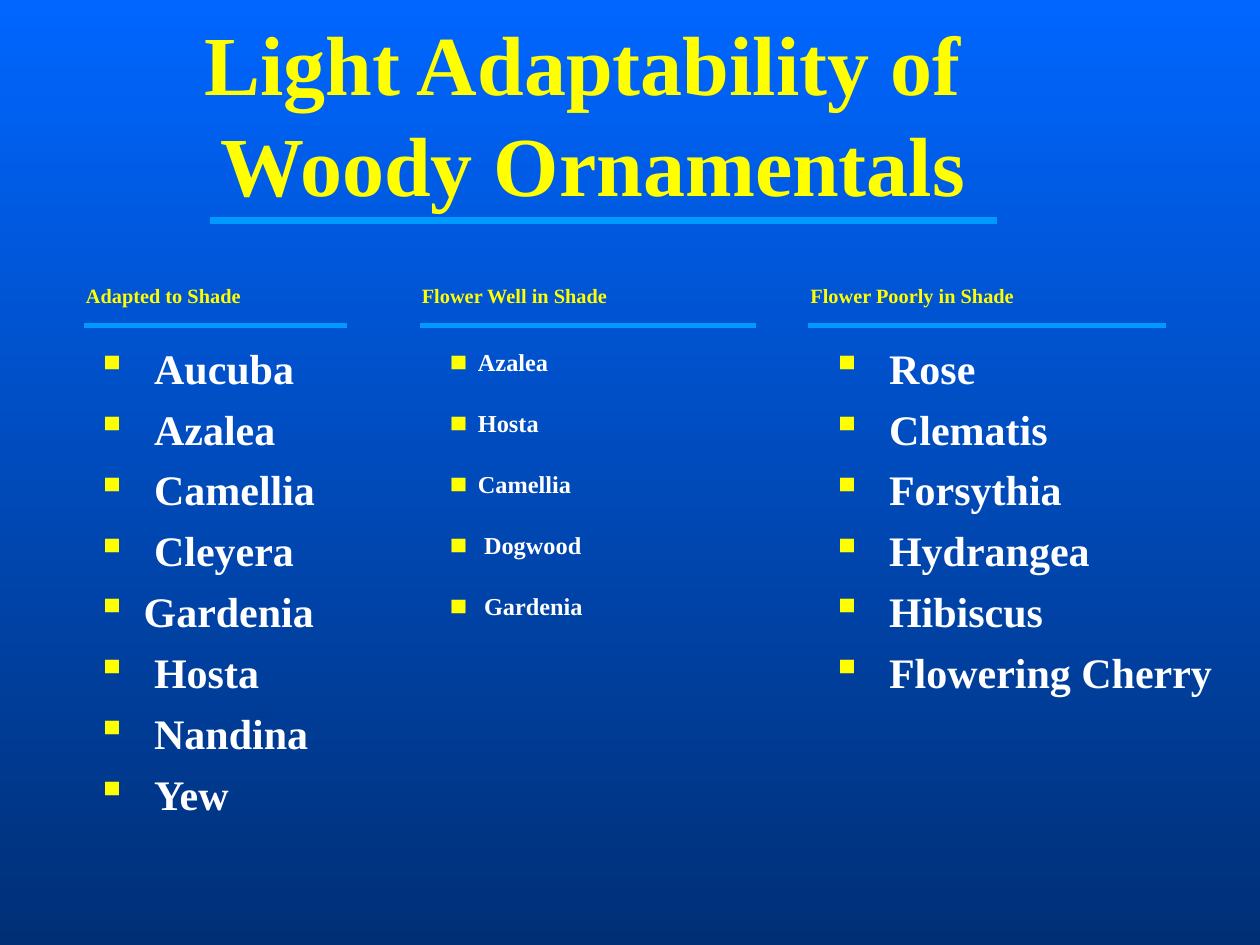
from dataclasses import dataclass

from lxml import etree
from pptx import Presentation
from pptx.dml.color import RGBColor
from pptx.enum import shapes, text
from pptx.oxml import ns
from pptx.util import Pt


@dataclass(frozen=True)
class Theme:
    font: str = "Times New Roman"
    accent: str = "FFFF00"
    body: str = "FFFFFF"
    rule: str = "0099FF"
    sky: tuple = ("0066FF", "002F76")
    title_size: int = 48
    heading_size: int = 20
    item_size: int = 24


class Page:
    """The current slide and the style its elements share."""

    def __init__(self, deck, theme):
        self.theme = theme
        self.slide = deck.slides.add_slide(deck.slide_layouts[6])

    def background(self):
        fill = self.slide.background.fill
        fill.gradient()
        fill.gradient_angle = 270
        for stop, color in zip(fill.gradient_stops, self.theme.sky):
            stop.color.rgb = RGBColor.from_string(color)

    def frame(self, left, top, width, height):
        box = self.slide.shapes.add_textbox(Pt(left), Pt(top), Pt(width), Pt(height))
        box.text_frame.word_wrap = True
        return box.text_frame

    def style(self, para, size, color):
        para.font.name = self.theme.font
        para.font.size = Pt(size)
        para.font.bold = True
        para.font.color.rgb = RGBColor.from_string(color)

    def raise_text(self, para):
        for span in para.runs:
            span.font._element.set("baseline", "30000")

    def title(self, words, left, top, width, height):
        frame = self.frame(left, top, width, height)
        frame.vertical_anchor = text.MSO_ANCHOR.MIDDLE
        para = frame.paragraphs[0]
        para.text = words
        para.alignment = text.PP_ALIGN.CENTER
        para.line_spacing = Pt(57.7)
        self.style(para, self.theme.title_size, self.theme.accent)

    def heading(self, words, left, top, width, height):
        para = self.frame(left, top, width, height).paragraphs[0]
        para.text = words
        self.style(para, self.theme.heading_size, self.theme.accent)
        self.raise_text(para)

    def bullet(self, para, indent):
        props = para._p.get_or_add_pPr()
        props.set("marL", str(Pt(indent)))
        props.set("indent", str(-Pt(indent)))
        color = etree.Element(ns.qn("a:buClr"))
        etree.SubElement(color, ns.qn("a:srgbClr"), val=self.theme.accent)
        mark = etree.Element(ns.qn("a:buChar"), char="▪")
        # Bullet settings stand between the spacing and the default run style
        default = props.find(ns.qn("a:defRPr"))
        default.addprevious(color)
        default.addprevious(mark)

    def items(self, entries, left, top, width, height, raised):
        frame = self.frame(left, top, width, height)
        for number, (words, indent) in enumerate(entries):
            para = frame.add_paragraph() if number else frame.paragraphs[0]
            para.text = words
            para.space_before = Pt(6)
            self.style(para, self.theme.item_size, self.theme.body)
            self.bullet(para, indent)
            if raised:
                self.raise_text(para)

    def rule(self, left, right, y, weight):
        line = self.slide.shapes.add_connector(
            shapes.MSO_CONNECTOR.STRAIGHT, Pt(left), Pt(y), Pt(right), Pt(y))
        line.line.color.rgb = RGBColor.from_string(self.theme.rule)
        line.line.width = Pt(weight)
        etree.SubElement(line._element.spPr, ns.qn("a:effectLst"))


# Each column: heading and its box, rule ends, list box, raised text, (item, indent)
COLUMNS = [
    ("Adapted to Shade", (42, 198), (48, 198), (48, 144), False,
     [("Aucuba", 33), ("Azalea", 33), ("Camellia", 33), ("Cleyera", 33),
      ("Gardenia", 27), ("Hosta", 33), ("Nandina", 33), ("Yew", 33)]),
    ("Flower Well in Shade", (234, 222), (240, 432), (246, 156), True,
     [("Azalea", 20), ("Hosta", 20), ("Camellia", 20),
      ("Dogwood", 23.5), ("Gardenia", 23.5)]),
    ("Flower Poorly in Shade", (456, 228), (462, 666), (468, 252), False,
     [("Rose", 33), ("Clematis", 33), ("Forsythia", 33), ("Hydrangea", 33),
      ("Hibiscus", 33), ("Flowering Cherry", 33)]),
]


def main():
    deck = Presentation()
    deck.slide_width, deck.slide_height = Pt(720), Pt(540)
    page = Page(deck, Theme())
    page.background()

    # Title with its rule
    page.title("Light Adaptability of \vWoody Ornamentals", -42, 19, 762, 90)
    page.rule(120, 570, 126, 4.5)

    # Three columns
    for name, (left, width), (start, end), (x, span), raised, entries in COLUMNS:
        page.heading(name, left, 156, width, 31)
        page.rule(start, end, 186, 3)
        page.items(entries, x, 192, span, 212 if raised else 324, raised)

    deck.save("out.pptx")


if __name__ == "__main__":
    main()
